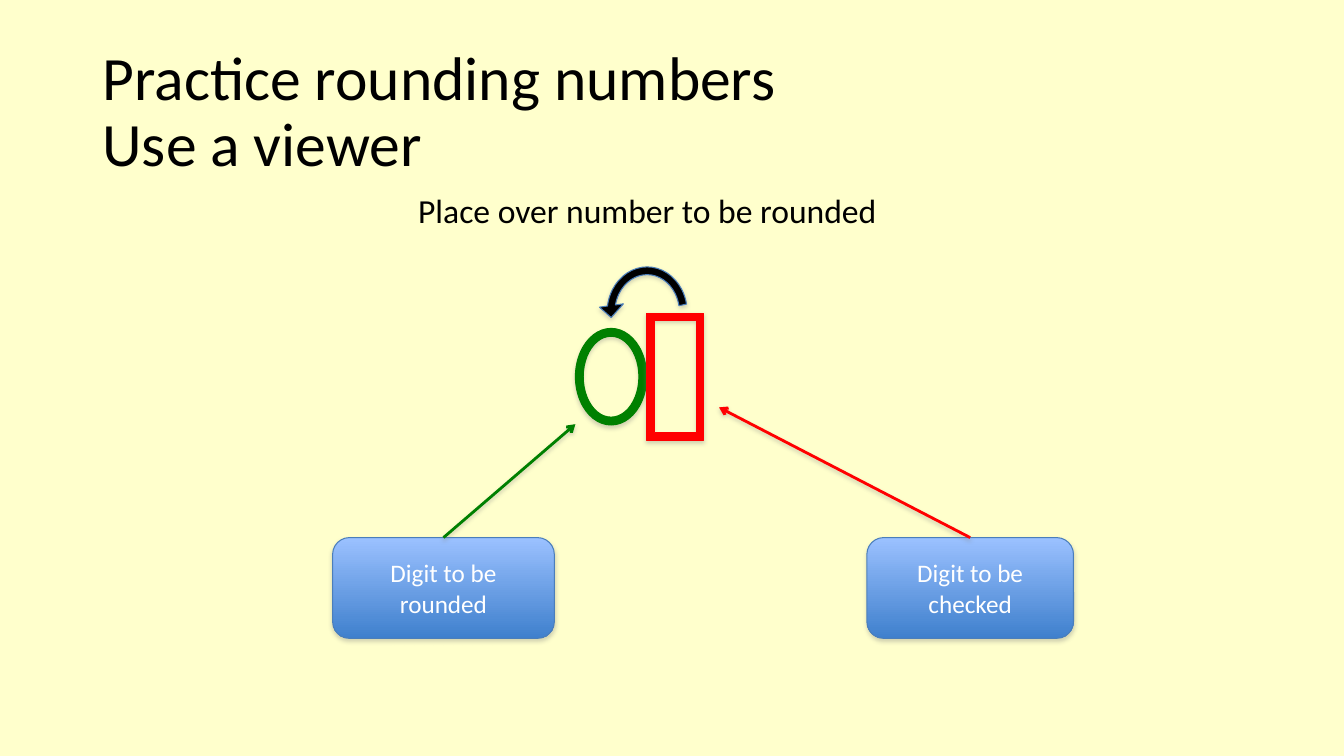
from dataclasses import dataclass

from lxml.etree import SubElement
from pptx import Presentation
from pptx.dml.color import RGBColor
from pptx.enum.shapes import MSO_CONNECTOR, MSO_SHAPE
from pptx.enum.text import MSO_ANCHOR, MSO_AUTO_SIZE, PP_ALIGN
from pptx.oxml.ns import qn
from pptx.util import Inches, Pt


@dataclass(frozen=True)
class Theme:
    font: str = "Calibri"
    background: str = "FFFFCC"
    ink: str = "000000"
    label: str = "FFFFFF"
    rounded: str = "008000"
    checked: str = "FF0000"
    box_top: str = "9BC1FF"
    box_bottom: str = "3F80CD"
    outline: str = "4A7EBB"
    shadow: str = "808080"
    title_size: int = 44
    hint_size: int = 24
    label_size: int = 18


class ViewerSlide:
    """Places elements on a grid of 80 columns by 45 rows."""

    def __init__(self, deck, theme):
        self.theme = theme
        self.column = deck.slide_width / 80
        self.row = deck.slide_height / 45
        self.slide = deck.slides.add_slide(deck.slide_layouts[5])
        background = self.slide.background.fill
        background.solid()
        background.fore_color.rgb = RGBColor.from_string(theme.background)

    def place(self, column, row, *size):
        spans = (column, row) + size
        units = (self.column, self.row) * 2
        return [round(span * unit) for span, unit in zip(spans, units)]

    def add_wording(self, paragraph, text, size, color):
        for number, part in enumerate(text.split("\n")):
            if number:
                paragraph.add_line_break()
            run = paragraph.add_run()
            run.text = part
            run.font.name = self.theme.font
            run.font.size = Pt(size)
            run.font.color.rgb = RGBColor.from_string(color)

    def cast_shadow(self, element, distance=1.8, opacity=35):
        properties = element._element.spPr
        effects = properties.find(qn("a:effectLst"))
        if effects is None:
            effects = SubElement(properties, qn("a:effectLst"))
        outer = SubElement(effects, qn("a:outerShdw"), blurRad=str(Pt(3.1)),
                           dist=str(Pt(distance)), dir="5400000", rotWithShape="0")
        tint = SubElement(outer, qn("a:srgbClr"), val=self.theme.shadow)
        SubElement(tint, qn("a:alpha"), val=str(opacity * 1000))

    def title(self, text, *area):
        heading = self.slide.shapes.title
        heading.left, heading.top, heading.width, heading.height = self.place(*area)
        frame = heading.text_frame
        frame.auto_size = MSO_AUTO_SIZE.NONE
        frame.vertical_anchor = MSO_ANCHOR.MIDDLE
        paragraph = frame.paragraphs[0]
        paragraph.alignment = PP_ALIGN.LEFT
        paragraph.line_spacing = 0.9
        self.add_wording(paragraph, text, self.theme.title_size, self.theme.ink)

    def hint(self, text, *area):
        caption = self.slide.shapes.add_textbox(*self.place(*area))
        frame = caption.text_frame
        frame.word_wrap = True
        frame.auto_size = MSO_AUTO_SIZE.SHAPE_TO_FIT_TEXT
        self.add_wording(frame.paragraphs[0], text, self.theme.hint_size, self.theme.ink)

    def outlined(self, preset, area, outline, adjustments):
        element = self.slide.shapes.add_shape(preset, *self.place(*area))
        for index, value in enumerate(adjustments):
            element.adjustments[index] = value
        element.line.color.rgb = RGBColor.from_string(outline)
        element.line.width = Pt(0.75)
        element.shadow.inherit = False
        self.cast_shadow(element)
        return element

    def marker(self, preset, area, color, adjustments, outline=None):
        mark = self.outlined(preset, area, outline or color, adjustments)
        mark.fill.solid()
        mark.fill.fore_color.rgb = RGBColor.from_string(color)
        return mark

    def label_box(self, text, *area):
        box = self.outlined(MSO_SHAPE.ROUNDED_RECTANGLE, area, self.theme.outline, [0.167])
        box.fill.gradient()
        box.fill.gradient_angle = 270
        shades = (self.theme.box_top, self.theme.box_bottom)
        for position, (stop, shade) in enumerate(zip(box.fill.gradient_stops, shades)):
            stop.position = position
            stop.color.rgb = RGBColor.from_string(shade)
        frame = box.text_frame
        frame.word_wrap = True
        frame.vertical_anchor = MSO_ANCHOR.MIDDLE
        frame.paragraphs[0].alignment = PP_ALIGN.CENTER
        self.add_wording(frame.paragraphs[0], text, self.theme.label_size, self.theme.label)
        return box

    def pointer(self, box, target, color):
        tip = self.place(*target)
        arrow = self.slide.shapes.add_connector(MSO_CONNECTOR.STRAIGHT, box.left, box.top, *tip)
        arrow.begin_connect(box, 0)
        arrow.line.color.rgb = RGBColor.from_string(color)
        arrow.line.width = Pt(2)
        SubElement(arrow._element.spPr.find(qn("a:ln")), qn("a:tailEnd"), type="arrow")
        self.cast_shadow(arrow, distance=1.6, opacity=38)


def main():
    deck = Presentation()
    deck.slide_width, deck.slide_height = Inches(13.333), Inches(7.5)
    theme = Theme()
    viewer = ViewerSlide(deck, theme)

    # Heading
    viewer.title("Practice rounding numbers\nUse a viewer", 5.5, 2.4, 69, 8.7)

    # Viewer windows
    viewer.marker(MSO_SHAPE.DONUT, (34.25, 19.55, 4.25, 5.75), theme.rounded, [0.11])
    viewer.marker(MSO_SHAPE.FRAME, (38.5, 18.65, 3.4, 7.55), theme.checked, [0.13])
    viewer.hint("Place over number to be rounded", 24.3, 11, 29.4, 3.05)

    # Labels and their pointers
    rounded_box = viewer.label_box("Digit to be rounded", 19.8, 32, 13.2, 6)
    checked_box = viewer.label_box("Digit to be checked", 51.6, 32, 12.3, 6)
    viewer.pointer(checked_box, (42.8, 24.25), theme.checked)
    viewer.pointer(rounded_box, (34.25, 25.25), theme.rounded)

    # Turn from the checked digit back to the rounded one:
    # thickness, head sweep, head angle, start angle, head half-width
    turn = viewer.marker(MSO_SHAPE.CIRCULAR_ARROW, (35.65, 15.4, 5.75, 6.4), theme.ink,
                         [0.08, 11.4, 209.4, 115.2, 0.125], theme.outline)
    turn._element.spPr.find(qn("a:xfrm")).set("flipH", "1")

    deck.save("out.pptx")


if __name__ == "__main__":
    main()
